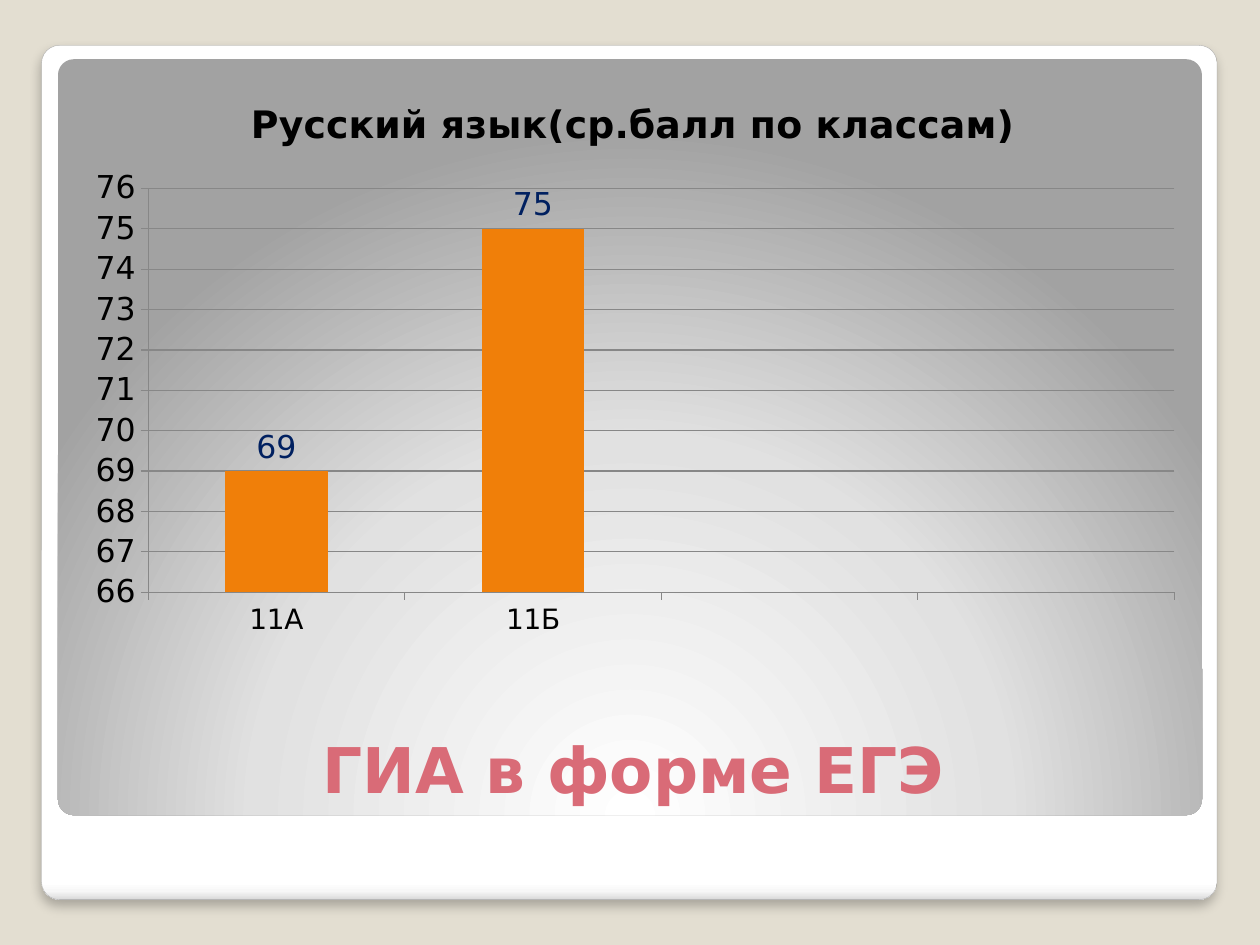
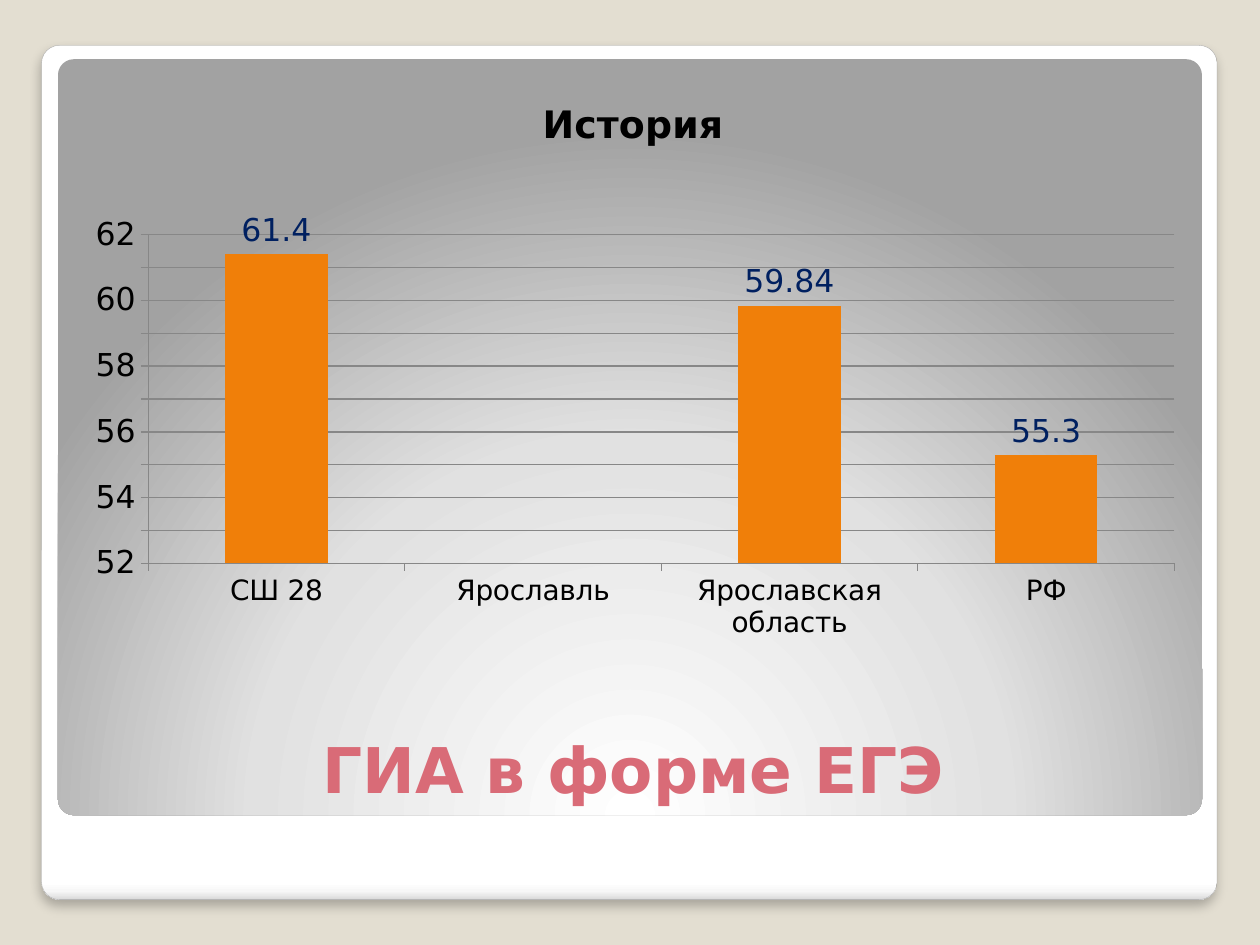
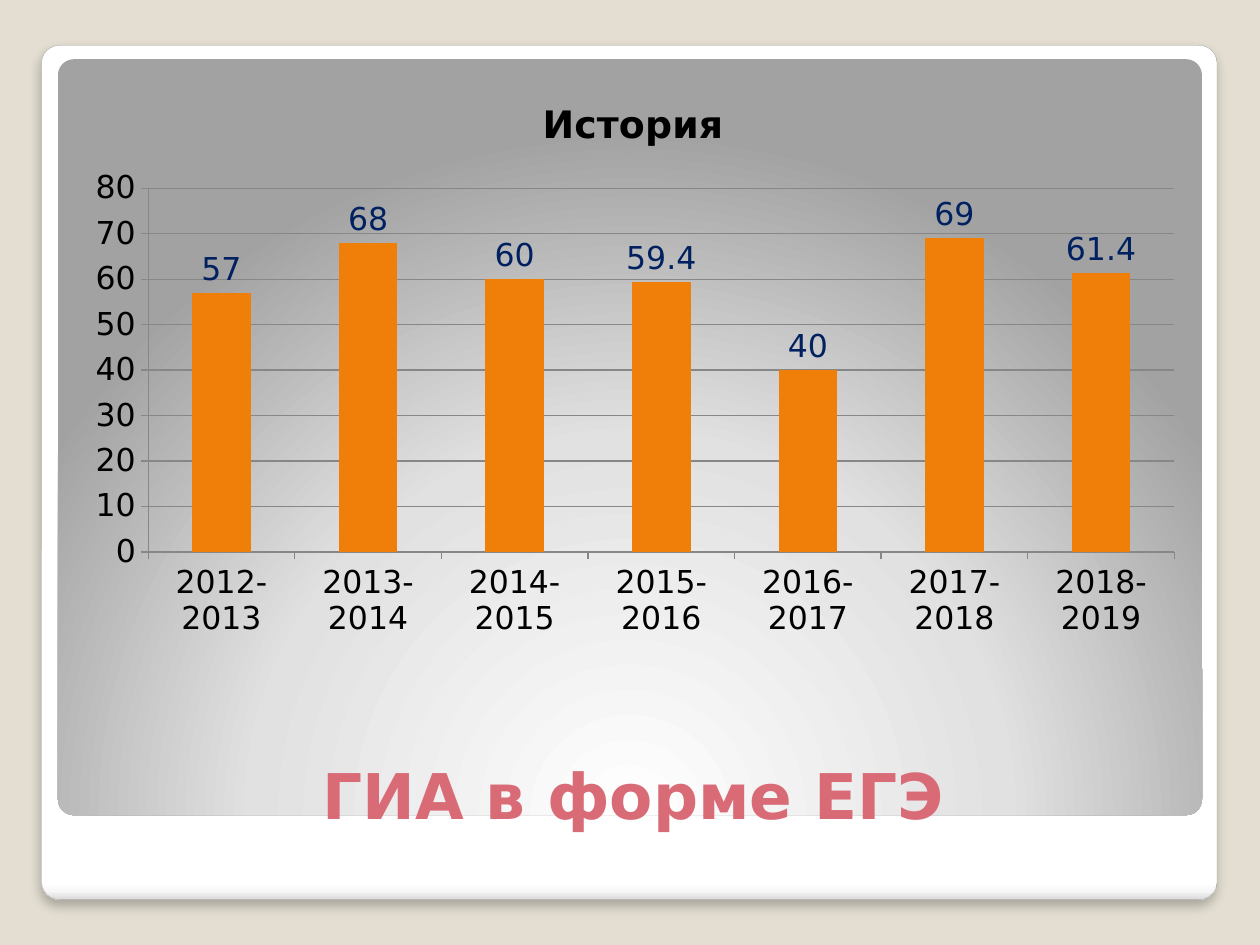
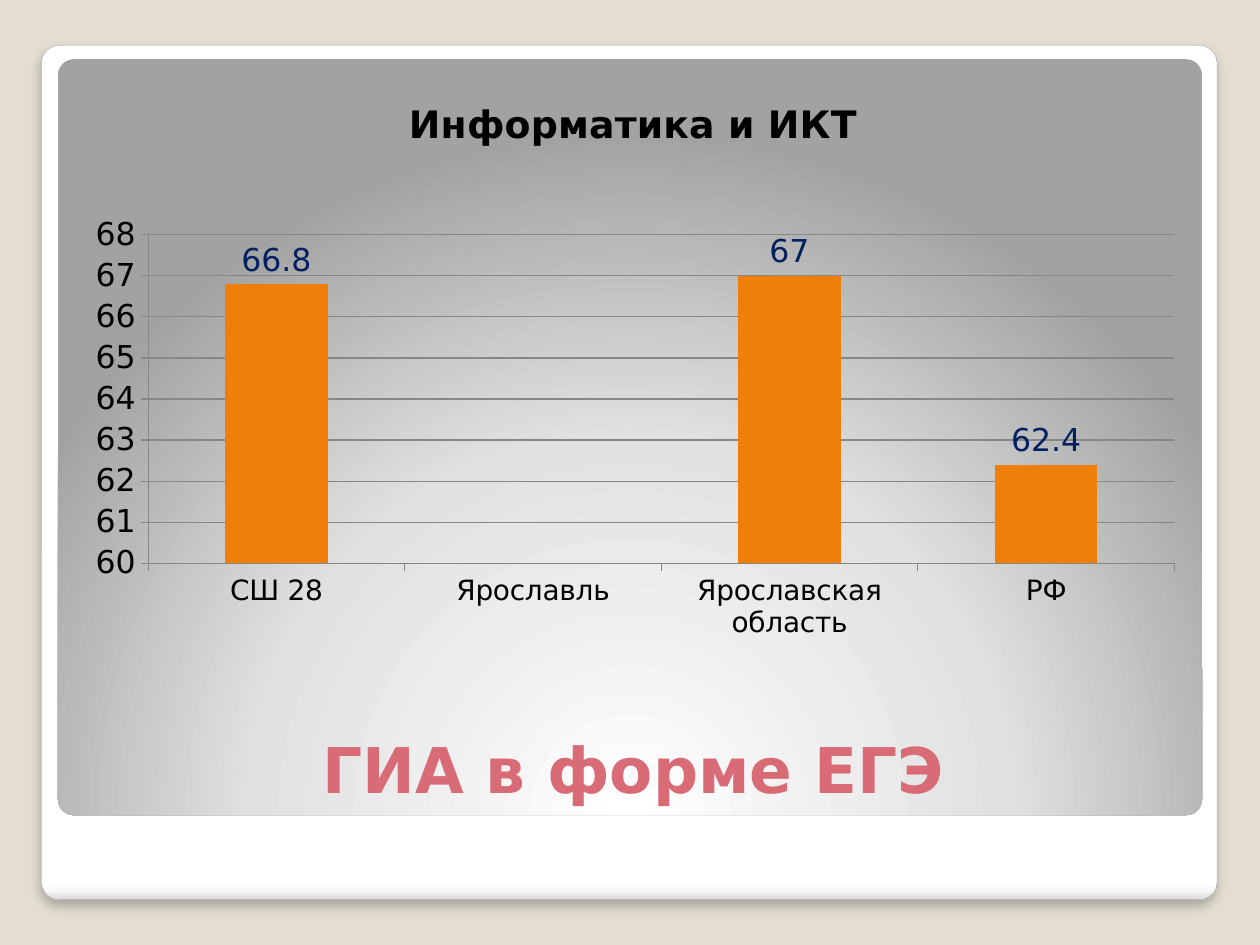
"""Build four slides of exam score charts on a shared framed panel."""
from pptx import Presentation, util as u
from pptx import oxml
from pptx.chart import data as chart_data
from pptx.dml.color import RGBColor
from pptx.enum import chart as kinds, shapes, text
from pptx.oxml import ns

COLORS = {
    "page": "E3DED1", "edge": "A4A4A4", "title": "D96B77", "bar": "F07F09",
    "value": "002060", "text": "000000", "grid": "878787",
}
FONT = "DejaVu Sans"
COLUMNS, ROWS = 100, 75
CORNER = 0.021
CHART_CELLS = (5.5, 5.8, 89.5, 45.8)
REGIONS = ["СШ 28", "Ярославль", "Ярославская область", "РФ"]
YEARS = [f"{year}-{year + 1}" for year in range(2012, 2019)]

PANELS = [
    {"cells": (3.3, 3.6, 93.3, 67.8),
     "stops": [(0, "FFFFFF"), (98, "FFFFFF"), (99, "F7F7F7"), (100, "DADADA")],
     "direction": '<a:lin ang="5400000" scaled="0"/>', "framed": True},
    {"cells": (4.6, 4.7, 90.8, 60),
     "stops": [(0, "FFFFFF"), (55, "E1E1E1"), (100, "A2A2A2")],
     "direction": '<a:path path="circle"><a:fillToRect l="50000" t="175000" '
                  'r="50000" b="-75000"/></a:path>', "framed": False},
]

SLIDES = [
    {"subject": "Русский язык(ср.балл по классам)", "categories": ["11А", "11Б", "", ""],
     "scores": [69, 75, None, None], "scale": (66, 76, 1), "label_size": 16,
     "plot": (0.2, 0.7), "title_cells": (5.5, 52.3, 89.5, 11.7)},
    {"subject": "История", "categories": REGIONS,
     "scores": [61.4, None, 59.84, 55.3], "scale": (52, 62, 1), "label_size": 16,
     "plot": (0.28, 0.57), "title_cells": (5.5, 52.3, 89.5, 11.7)},
    {"subject": "История", "categories": YEARS,
     "scores": [57, 68, 60, 59.4, 40, 69, 61.4], "scale": (0, 80, 10), "label_size": 18,
     "plot": (0.2, 0.63), "title_cells": (5.5, 54.5, 89.5, 11.5)},
    {"subject": "Информатика и ИКТ", "categories": REGIONS,
     "scores": [66.8, None, 67, 62.4], "scale": (60, 68, 1), "label_size": 16,
     "plot": (0.28, 0.57), "title_cells": (5.5, 52.3, 89.5, 11.7)},
]

deck = Presentation()
deck.slide_width, deck.slide_height = u.Inches(10), u.Inches(7.5)


def place(left, top, width, height):
    """Turn grid columns and rows into slide lengths."""
    column, row = deck.slide_width / COLUMNS, deck.slide_height / ROWS
    return [round(n) for n in (left * column, top * row, width * column, height * row)]


def style(font, color, **values):
    """Apply the shared typeface, a colour and further font values."""
    for name, value in {"name": FONT, **values}.items():
        setattr(font, name, value)
    font.color.rgb = RGBColor.from_string(COLORS[color])


for content in SLIDES:
    page = deck.slides.add_slide(deck.slide_layouts[6])
    page.background.fill.solid()
    page.background.fill.fore_color.rgb = RGBColor.from_string(COLORS["page"])

    for panel in PANELS:
        shape = page.shapes.add_shape(shapes.MSO_SHAPE.ROUNDED_RECTANGLE, *place(*panel["cells"]))
        shape.adjustments[0] = CORNER
        shape.shadow.inherit = False
        shape.fill.background()
        stops = "".join(f'<a:gs pos="{share * 1000}"><a:srgbClr val="{color}"/></a:gs>'
                        for share, color in panel["stops"])
        properties = shape.element.spPr
        properties.replace(properties.find(ns.qn("a:noFill")), oxml.parse_xml(
            f'<a:gradFill {ns.nsdecls("a")} rotWithShape="1"><a:gsLst>{stops}</a:gsLst>'
            f'{panel["direction"]}</a:gradFill>'))
        if panel["framed"]:
            shape.line.color.rgb = RGBColor.from_string(COLORS["edge"])
            shape.line.width = u.Pt(0.16)
            properties.find(ns.qn("a:effectLst")).append(oxml.parse_xml(
                f'<a:outerShdw {ns.nsdecls("a")} blurRad="{u.Pt(6)}" dist="{u.Pt(4)}" '
                'dir="5400000" algn="t" rotWithShape="0"><a:srgbClr val="000000">'
                '<a:alpha val="25000"/></a:srgbClr></a:outerShdw>'))
        else:
            shape.line.fill.background()

    box = page.shapes.add_textbox(*place(*content["title_cells"]))
    frame_format = {"word_wrap": True, "vertical_anchor": text.MSO_ANCHOR.BOTTOM,
                    "margin_top": 0, "margin_bottom": 0}
    for name, value in frame_format.items():
        setattr(box.text_frame, name, value)
    para = box.text_frame.paragraphs[0]
    para.alignment = text.PP_ALIGN.CENTER
    span = para.add_run()
    span.text = "ГИА в форме ЕГЭ"
    style(span.font, "title", size=u.Pt(36), bold=True)

    scores = chart_data.CategoryChartData()
    scores.categories = content["categories"]
    scores.add_series("Series 1", content["scores"])
    chart = page.shapes.add_chart(kinds.XL_CHART_TYPE.COLUMN_CLUSTERED,
                                  *place(*CHART_CELLS), scores).chart
    chart.has_legend = False
    style(chart.font, "text", size=u.Pt(18))
    chart.has_title = True
    chart.chart_title.include_in_layout = False
    heading = chart.chart_title.text_frame.paragraphs[0].add_run()
    heading.text = content["subject"]
    style(heading.font, "text", size=u.Pt(21.6), bold=True)

    plot = chart.plots[0]
    plot.vary_by_categories = False
    plot.gap_width = 150
    series = plot.series[0]
    series.format.fill.solid()
    series.format.fill.fore_color.rgb = RGBColor.from_string(COLORS["bar"])
    labels = series.data_labels
    labels.show_value = True
    labels.position = kinds.XL_LABEL_POSITION.OUTSIDE_END
    style(labels.font, "value", size=u.Pt(18))

    scale = dict(zip(("minimum_scale", "maximum_scale", "major_unit"), content["scale"]))
    for name, value in scale.items():
        setattr(chart.value_axis, name, value)
    chart.value_axis.has_major_gridlines = True
    for axis, size in ((chart.category_axis, content["label_size"]), (chart.value_axis, 18)):
        axis.major_tick_mark = kinds.XL_TICK_MARK.OUTSIDE
        style(axis.tick_labels.font, "text", size=u.Pt(size))
    for ruled in (chart.category_axis, chart.value_axis, chart.value_axis.major_gridlines):
        ruled.format.line.color.rgb = RGBColor.from_string(COLORS["grid"])
        ruled.format.line.width = u.Pt(0.75)

    top, height = content["plot"]
    area = chart.element.chart.plotArea
    for former in area.findall(ns.qn("c:layout")):
        area.remove(former)
    area.insert(0, oxml.parse_xml(
        f'<c:layout {ns.nsdecls("c")}><c:manualLayout><c:layoutTarget val="inner"/>'
        '<c:xMode val="edge"/><c:yMode val="edge"/><c:x val="0.07"/>'
        f'<c:y val="{top}"/><c:w val="0.91"/><c:h val="{height}"/>'
        '</c:manualLayout></c:layout>'))

deck.save("out.pptx")
